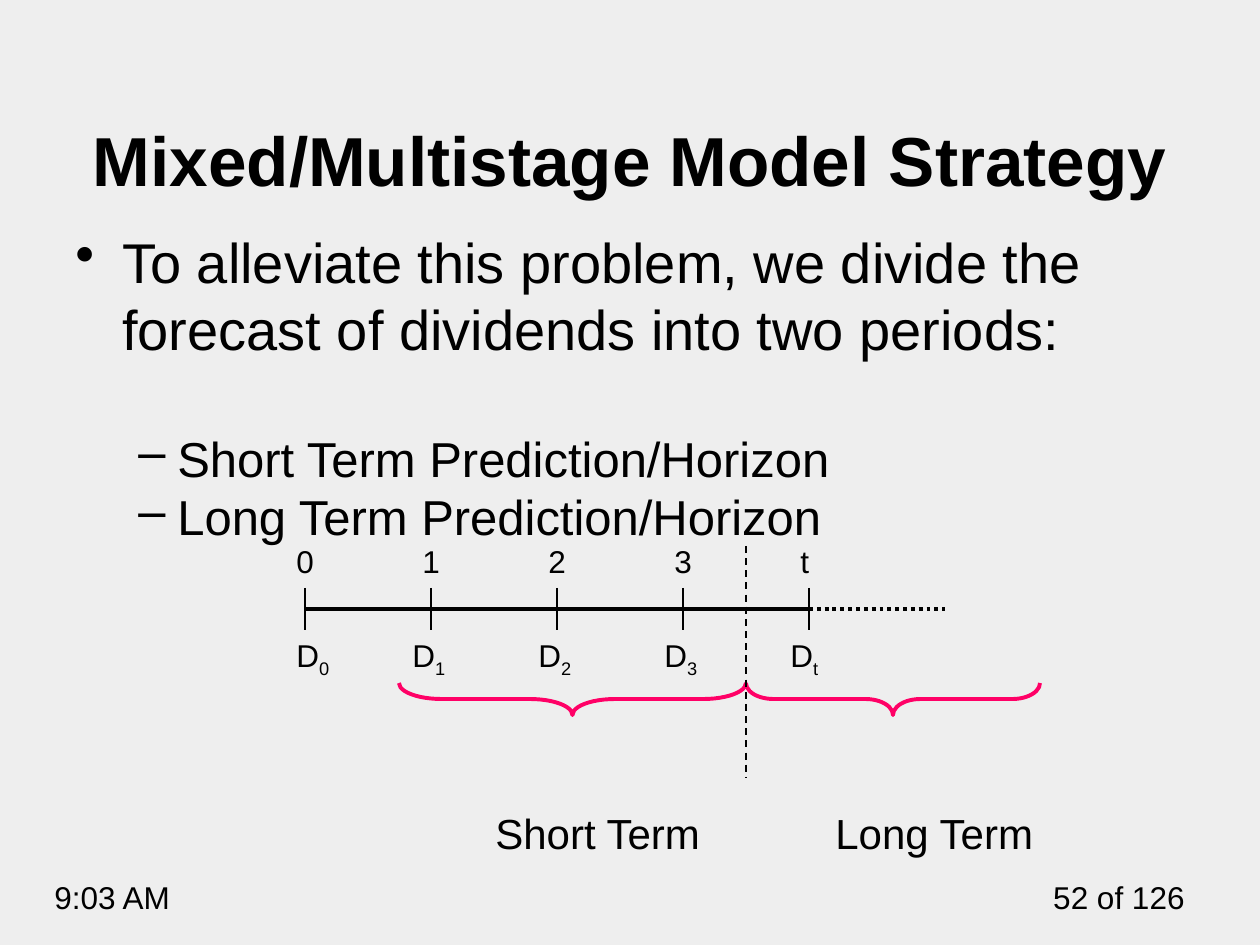
from lxml import etree
from pptx import Presentation
from pptx import util as u
from pptx.dml.color import RGBColor
from pptx.enum import dml, shapes, text
from pptx.oxml.ns import qn

SCALE = 914400 / 126
BLACK, PINK, GREY = "000000", "FF0066", "EEEEEE"


def px(n):
    """Turn px into EMU."""
    return u.Emu(round(n * SCALE))


def rgb(value):
    """Turn a hex string into a colour."""
    return RGBColor.from_string(value)


def style(font, size, bold=False):
    """Set the font of a paragraph or run."""
    font.name, font.size, font.bold = "Arial", u.Pt(size), bold
    font.color.rgb = rgb(BLACK)


def add_text(s, box, lines, size, bold=False, align=text.PP_ALIGN.LEFT,
             anchor=text.MSO_ANCHOR.TOP):
    """Add a wrapped text box and return its text frame."""
    tf = s.shapes.add_textbox(*map(px, box)).text_frame
    tf.word_wrap, tf.vertical_anchor = True, anchor
    tf.text = lines
    for p in tf.paragraphs:
        p.alignment = align
        style(p.font, size, bold)
    return tf


def add_line(s, x1, y1, x2, y2, width, dash=None):
    """Add a straight black line without a shadow."""
    sp = s.shapes.add_connector(shapes.MSO_CONNECTOR.STRAIGHT, *map(px, (x1, y1, x2, y2)))
    sp.line.color.rgb, sp.line.width = rgb(BLACK), u.Pt(width)
    if dash:
        sp.line.dash_style = dash
    etree.SubElement(sp._element.spPr, qn("a:effectLst"))


def add_brace(s, box, curve):
    """Add a brace that opens upwards and fills the box."""
    x, y, w, h = box
    left, top = x + (w - h) / 2, y + (h - w) / 2
    sp = s.shapes.add_shape(shapes.MSO_SHAPE.LEFT_BRACE, *map(px, (left, top, h, w)))
    sp.rotation = 270
    sp.adjustments[0], sp.adjustments[1] = curve, 0.5
    sp.shadow.inherit = False
    sp.fill.background()
    sp.line.color.rgb, sp.line.width = rgb(PINK), u.Pt(2.25)


def add_bullet(p, char, margin, hang):
    """Give a paragraph a hanging bullet."""
    pPr = p._p.get_or_add_pPr()
    pPr.set("marL", str(px(margin)))
    pPr.set("indent", str(-px(hang)))
    bullet = etree.Element(qn("a:buChar"), char=char)
    pPr.insert_element_before(bullet, "a:tabLst", "a:defRPr", "a:extLst")


def add_body(s, box):
    """Add the main point and its two sub-points."""
    tf = add_text(s, box, "To alleviate this problem, we divide the forecast of dividends "
                  "into two periods:\nShort Term Prediction/Horizon\n"
                  "Long Term Prediction/Horizon", 32)
    first, *subs = tf.paragraphs
    add_bullet(first, "•", 47, 47)
    for p in subs:
        add_bullet(p, "–", 102, 39)
        p.font.size = u.Pt(28)
    subs[0].space_before = u.Pt(38)


def add_timeline(s, box):
    """Add the dividend time line with its ticks, braces and period labels."""
    x, y, w, h = box
    step, axis, split = 126, y + 73, x + 441
    end = x + 4 * step
    add_line(s, x, axis, end, axis, 2.25)
    add_line(s, end, axis, end + 136, axis, 2.25, dml.MSO_LINE.ROUND_DOT)
    for i, name in enumerate("0123t"):
        tick = x + i * step
        add_line(s, tick, axis - 21, tick, axis + 21, 1)
        add_text(s, (tick - 21, y, 44, 50), name, 18)
        label = add_text(s, (tick - (31 if i else 21), y + 94, 73, 50), "D", 18)
        r = label.paragraphs[0].add_run()
        r.text = name
        r.font._element.set("baseline", "-25000")
    add_brace(s, (split - 347, y + 147, 347, 32), 1.33)
    add_brace(s, (split, y + 147, 294, 32), 0.86)
    add_line(s, split, y + 10, split, y + 241, 1, dml.MSO_LINE.DASH)
    for left, name in ((178, "Short Term"), (518, "Long Term")):
        add_text(s, (x + left, y + h - 60, 240, 60), name, 24)


def add_footer(s, box):
    """Add the time and the page count."""
    x, y, w, h = box
    add_text(s, (x, y, 199, h), "9:03 AM", 18)
    add_text(s, (x + w - 189, y, 189, h), "52 of 126", 18, align=text.PP_ALIGN.RIGHT)


def main():
    """Build and save the slide."""
    prs = Presentation()
    prs.slide_width, prs.slide_height = px(1260), px(945)
    s = prs.slides.add_slide(prs.slide_layouts[6])
    s.background.fill.solid()
    s.background.fill.fore_color.rgb = rgb(GREY)
    add_footer(s, (42, 872, 1155, 50))
    add_text(s, (63, 49, 1134, 158), "Mixed/Multistage Model Strategy", 39.6, True,
             text.PP_ALIGN.CENTER, text.MSO_ANCHOR.BOTTOM)
    add_body(s, (63, 221, 1134, 330))
    add_timeline(s, (305, 536, 735, 325))
    prs.save("out.pptx")


if __name__ == "__main__":
    main()
